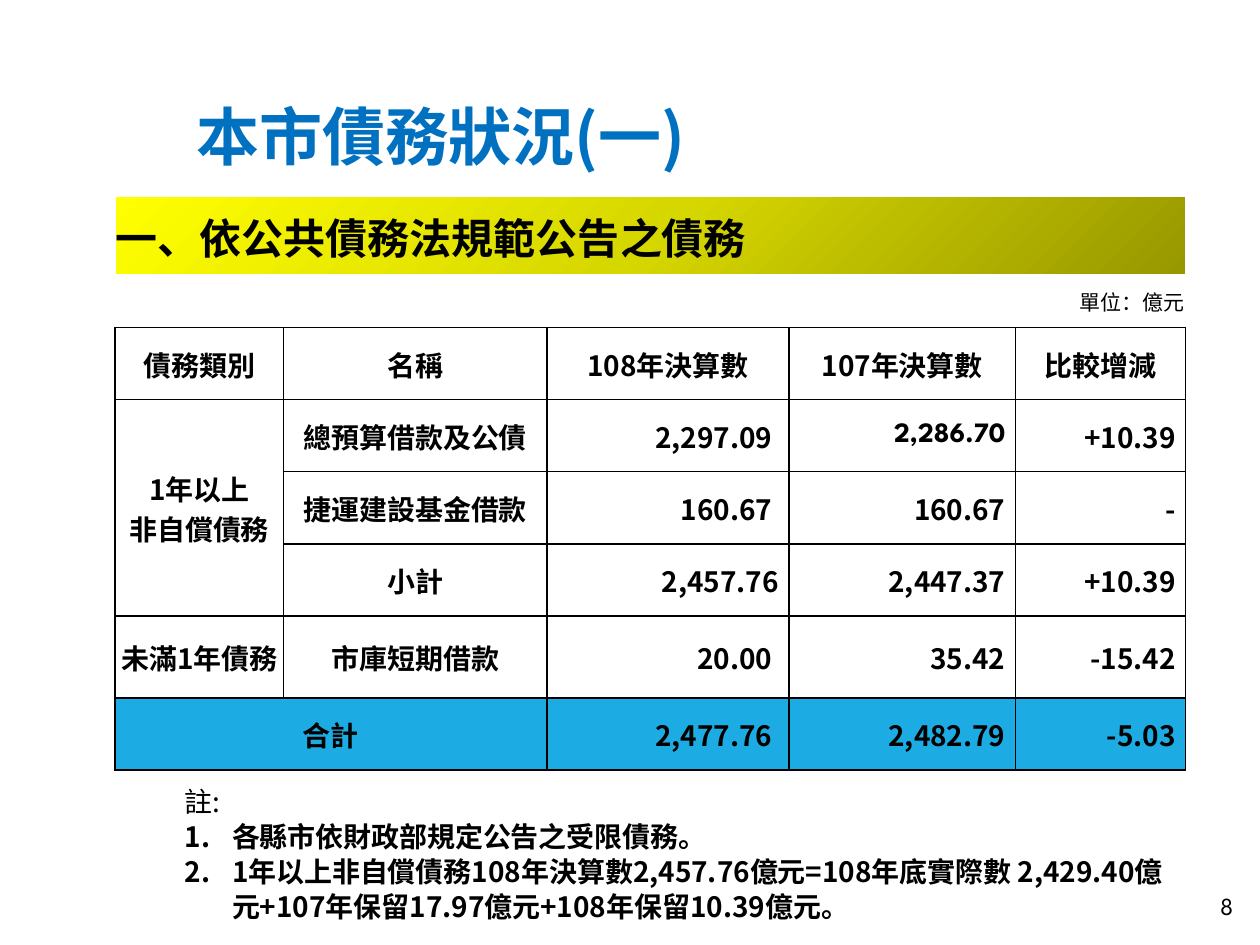
from lxml import etree
from pptx import Presentation
from pptx.dml.color import RGBColor
from pptx.enum.text import MSO_ANCHOR, PP_ALIGN
from pptx.oxml.ns import qn
from pptx.util import Pt

LEFT, CENTER, RIGHT = PP_ALIGN.LEFT, PP_ALIGN.CENTER, PP_ALIGN.RIGHT
MIDDLE = MSO_ANCHOR.MIDDLE
CJK, LATIN = "Noto Sans CJK SC", "League Spartan"
BLACK, WHITE, BLUE, TOTAL = "000000", "FFFFFF", "0070C0", "1CACE3"
BANNER = [(0, "979700"), (50, "D7D700"), (100, "FFFF00")]
COLS = [96.5, 150.5, 74.2, 64, 129.6, 97.2]
ROWS = [44.6, 30.2] + [41.2] * 6
MERGES = [(0, 0, 0, 5), (1, 3, 1, 5), (3, 0, 5, 0), (7, 0, 7, 1)]
MERGES += [(row, 2, row, 3) for row in range(2, 8)]
HEADS = ["債務類別", "名稱", "108年決算數", "107年決算數", "比較增減"]
DEBTS = [
    ["1年以上\n非自償債務", "總預算借款及公債", "2,297.09 ", "2,286.70", "+10.39"],
    ["", "捷運建設基金借款", "160.67 ", "160.67", "-"],
    ["", "小計", "2,457.76", "2,447.37", "+10.39"],
    ["未滿1年債務", "市庫短期借款", "20.00 ", "35.42", "-15.42"],
    ["合計", "", "2,477.76 ", "2,482.79", "-5.03"],
]
NOTES = [
    "各縣市依財政部規定公告之受限債務。",
    "1年以上非自償債務108年決算數2,457.76億元=108年底實際數 "
    "2,429.40億元+107年保留17.97億元+108年保留10.39億元。",
]


def rgb(code):
    return RGBColor.from_string(code)


def sub(parent, tag, **attrs):
    return etree.SubElement(parent, qn(tag), {k: str(v) for k, v in attrs.items()})


def add_run(p, text, size, color=BLACK, bold=False, font=CJK):
    r = p.add_run()
    r.text = text
    r.font.size, r.font.bold, r.font.name = Pt(size), bold, font
    r.font.color.rgb = rgb(color)
    sub(r._r.get_or_add_rPr(), "a:ea", typeface=font)


def add_textbox(s, x, y, w, h):
    tf = s.shapes.add_textbox(Pt(x), Pt(y), Pt(w), Pt(h)).text_frame
    tf.word_wrap = True
    return tf


def add_title(s, x, y, w, h):
    sp = s.shapes.title
    sp.left, sp.top, sp.width, sp.height = Pt(x), Pt(y), Pt(w), Pt(h)
    sp.text_frame.vertical_anchor = MIDDLE
    p = sp.text_frame.paragraphs[0]
    p.alignment = LEFT
    add_run(p, "本市債務狀況(一)", 36, BLUE, True)


def fill_gradient(cell, stops, angle):
    grad = sub(cell._tc.get_or_add_tcPr(), "a:gradFill", rotWithShape=0)
    gs_list = sub(grad, "a:gsLst")
    for pos, color in stops:
        sub(sub(gs_list, "a:gs", pos=pos * 1000), "a:srgbClr", val=color)
    sub(grad, "a:lin", ang=angle * 60000, scaled=1)


def set_borders(cell, row):
    for side in "LRTB":
        ruled = row > 1 or (row == 1 and side == "B")
        ln = sub(cell._tc.get_or_add_tcPr(), f"a:ln{side}", w=Pt(1))
        fill = sub(ln, "a:solidFill")
        sub(fill, "a:srgbClr", val=BLACK if ruled else WHITE)


def write_cell(cell, text, size=16, align=CENTER, bold=True, font=CJK):
    p = cell.text_frame.paragraphs[0]
    p.alignment = align
    for i, line in enumerate(text.split("\n")):
        if i:
            p.add_line_break()
        add_run(p, line, size, BLACK, bold, font)


def add_debt_table(s, x, y):
    frame = s.shapes.add_table(len(ROWS), len(COLS), Pt(x), Pt(y),
                               Pt(sum(COLS)), Pt(sum(ROWS)))
    table = frame.table
    table.first_row = table.horz_banding = False
    for col, width in zip(table.columns, COLS):
        col.width = Pt(width)
    for i, height in enumerate(ROWS):
        table.rows[i].height = Pt(height)
        for j in range(len(COLS)):
            cell = table.cell(i, j)
            cell.vertical_anchor = MIDDLE
            cell.margin_left = cell.margin_top = Pt(0.7)
            cell.margin_right = Pt(5.8 if i > 2 and j > 1 else 0.7)
            cell.margin_bottom = Pt(0)
            set_borders(cell, i)
            if i == 0:
                fill_gradient(cell, BANNER, 225)
            else:
                cell.fill.solid()
                cell.fill.fore_color.rgb = rgb(TOTAL if i == 7 else WHITE)
    for top, left, bottom, right in MERGES:
        table.cell(top, left).merge(table.cell(bottom, right))

    write_cell(table.cell(0, 0), "一、依公共債務法規範公告之債務", 24, LEFT)
    write_cell(table.cell(1, 3), "單位：億元", 12, RIGHT, False)
    for i, texts in enumerate([HEADS] + DEBTS, 2):
        for j, text in zip((0, 1, 2, 4, 5), texts):
            if text:
                align = RIGHT if i > 2 and j > 1 else CENTER
                font = LATIN if (i, j) == (3, 4) else CJK
                write_cell(table.cell(i, j), text, align=align, font=font)


def add_notes(s, x, y, w, h):
    tf = add_textbox(s, x, y, w, h)
    for i, text in enumerate(["註:"] + NOTES):
        p = tf.add_paragraph() if i else tf.paragraphs[0]
        p.line_spacing = Pt(20)
        pPr = p._p.get_or_add_pPr()
        pPr.set("marL", str(Pt(83 if i else 56)))
        pPr.set("indent", str(Pt(-27 if i else 0)))
        if i:
            sub(pPr, "a:buFont", typeface=CJK)
            sub(pPr, "a:buAutoNum", type="arabicPeriod")
        add_run(p, text, 16, bold=i > 0)


def add_page_number(s, x, y, w, h):
    tf = add_textbox(s, x, y, w, h)
    tf.vertical_anchor = MIDDLE
    p = tf.paragraphs[0]
    p.alignment = RIGHT
    add_run(p, "8", 14, font=LATIN)


def main():
    prs = Presentation()
    prs.slide_width, prs.slide_height = Pt(720), Pt(540)
    s = prs.slides.add_slide(prs.slide_layouts[5])
    add_title(s, 105, 49, 479.5, 57)
    add_debt_table(s, 65.6, 112.4)
    add_notes(s, 42.5, 444.2, 635, 88)
    add_page_number(s, 666, 503.3, 46, 28.8)
    prs.save("out.pptx")


if __name__ == "__main__":
    main()
